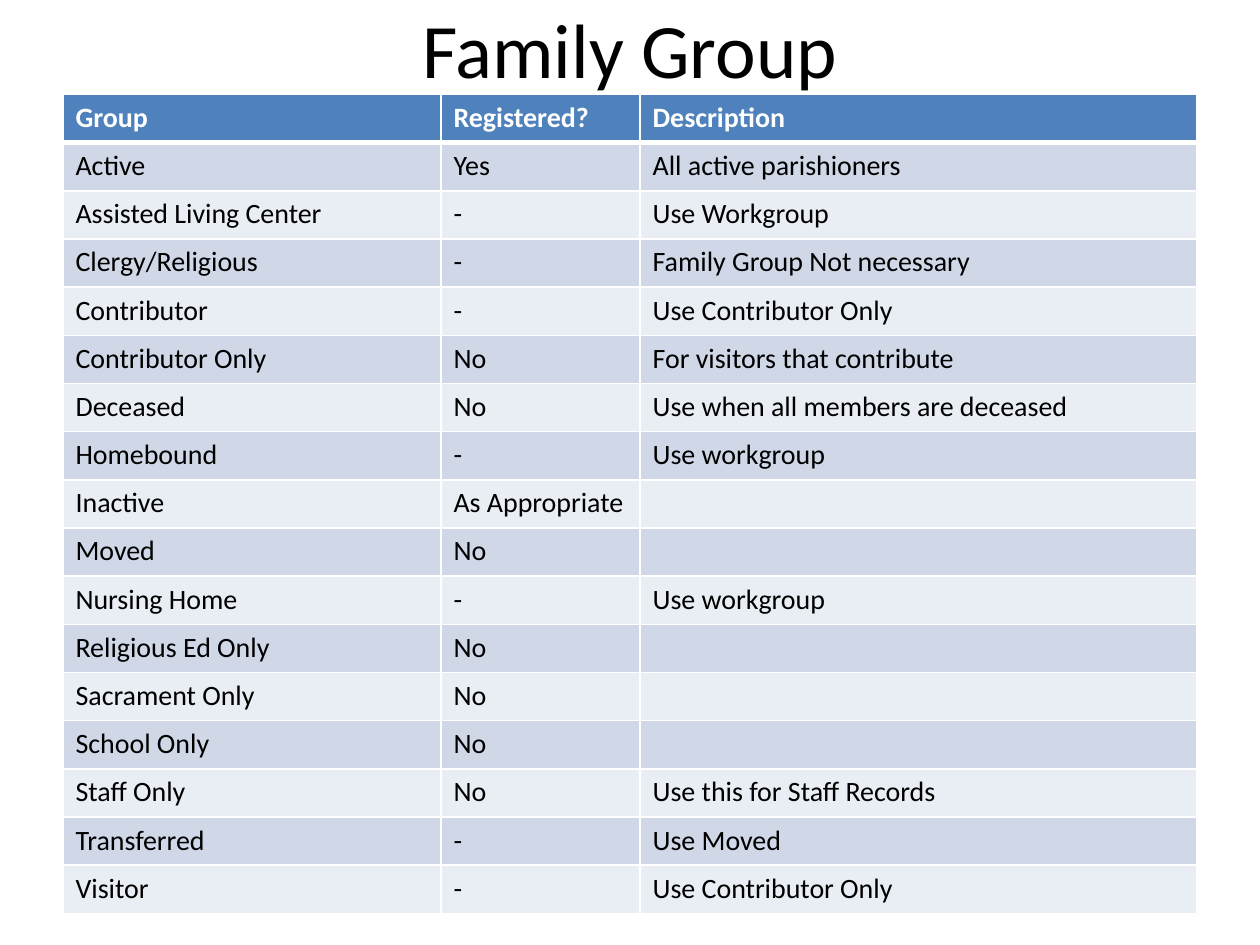
from dataclasses import dataclass

from lxml import etree
from pptx import Presentation, util as u
from pptx.dml.color import RGBColor
from pptx.enum import text
from pptx.oxml import ns


@dataclass(frozen=True)
class Theme:
    """Colours, font and type sizes of the slide."""
    font: str = "Calibri"
    title_size: int = 44
    table_size: int = 16
    ink: str = "000000"
    paper: str = "FFFFFF"
    header: str = "4F81BD"
    bands: tuple = ("D0D8E8", "E9EDF4")
    rule: int = 1
    header_rule: int = 3


THEME = Theme()
COLUMN_WIDTHS = (3, 1.58, 4.42)
FAMILY_GROUPS = (
    ("Group", "Registered?", "Description"),
    ("Active", "Yes", "All active parishioners"),
    ("Assisted Living Center", "-", "Use Workgroup"),
    ("Clergy/Religious", "-", "Family Group Not necessary"),
    ("Contributor", "-", "Use Contributor Only"),
    ("Contributor Only", "No", "For visitors that contribute"),
    ("Deceased", "No", "Use when all members are deceased"),
    ("Homebound", "-", "Use workgroup"),
    ("Inactive", "As Appropriate", ""),
    ("Moved", "No", ""),
    ("Nursing Home", "-", "Use workgroup"),
    ("Religious Ed Only", "No", ""),
    ("Sacrament Only", "No", ""),
    ("School Only", "No", ""),
    ("Staff Only", "No", "Use this for Staff Records"),
    ("Transferred", "-", "Use Moved"),
    ("Visitor", "-", "Use Contributor Only"),
)


def style_font(font, size, color, bold=False):
    """Apply the theme font with a size, colour and weight."""
    font.name = THEME.font
    font.size = u.Pt(size)
    font.bold = bold
    font.color.rgb = RGBColor.from_string(color)


def add_borders(cell, top, bottom):
    """Draw the four cell borders, with top and bottom widths in points."""
    properties = cell._tc.get_or_add_tcPr()
    widths = {"L": THEME.rule, "R": THEME.rule, "T": top, "B": bottom}
    for side, width in widths.items():
        line = etree.SubElement(properties, ns.qn(f"a:ln{side}"), w=str(u.Pt(width)))
        fill = etree.SubElement(line, ns.qn("a:solidFill"))
        etree.SubElement(fill, ns.qn("a:srgbClr"), val=THEME.paper)


def fill_cell(cell, wording, row):
    """Write and format one cell according to its row."""
    is_header = row == 0
    add_borders(
        cell,
        top=THEME.header_rule if row == 1 else THEME.rule,
        bottom=THEME.header_rule if is_header else THEME.rule,
    )
    cell.fill.solid()
    color = THEME.header if is_header else THEME.bands[(row - 1) % 2]
    cell.fill.fore_color.rgb = RGBColor.from_string(color)
    para = cell.text_frame.paragraphs[0]
    para.text = wording
    for span in para.runs:
        style_font(span.font, THEME.table_size,
                   THEME.paper if is_header else THEME.ink, is_header)
    if not wording:
        etree.SubElement(para._p, ns.qn("a:endParaRPr"), sz=str(THEME.table_size * 100))


def place_title(page, box, wording):
    """Move and format the title placeholder within the box."""
    title = page.shapes.title
    title.left, title.top, title.width, title.height = map(u.Inches, box)
    frame = title.text_frame
    frame.text = wording
    frame.word_wrap = True
    frame.vertical_anchor = text.MSO_ANCHOR.MIDDLE
    para = frame.paragraphs[0]
    para.alignment = text.PP_ALIGN.CENTER
    style_font(para.runs[0].font, THEME.title_size, THEME.ink)


def place_group_table(page, box, records):
    """Fill the box with a banded table of the records."""
    left, top, width, height = map(u.Inches, box)
    table = page.shapes.add_table(
        len(records), len(COLUMN_WIDTHS), left, top, width, height
    ).table
    for column, column_width in zip(table.columns, COLUMN_WIDTHS):
        column.width = u.Inches(column_width)
    for row, record in enumerate(records):
        for column, wording in enumerate(record):
            fill_cell(table.cell(row, column), wording, row)


def main():
    """Build and save the family group slide."""
    deck = Presentation()
    deck.slide_width, deck.slide_height = u.Inches(10), u.Inches(7.5)
    page = deck.slides.add_slide(deck.slide_layouts.get_by_name("Title Only"))
    place_title(page, (0.5, -0.25, 9, 1.25), "Family Group")
    place_group_table(page, (0.5, 0.75, 9, 6.5), FAMILY_GROUPS)
    deck.save("out.pptx")


if __name__ == "__main__":
    main()
